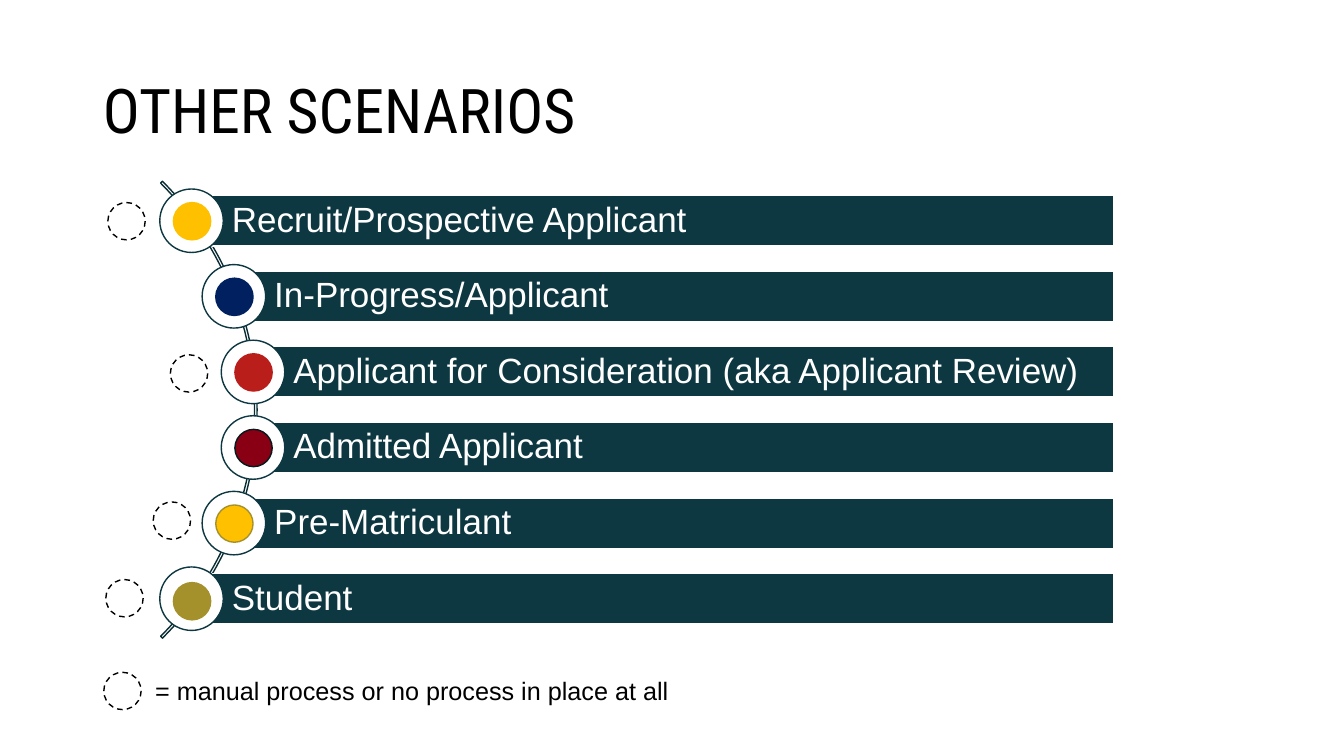
from dataclasses import dataclass
from typing import Optional

from pptx import Presentation
from pptx.dml.color import RGBColor
from pptx.enum.dml import MSO_LINE
from pptx.enum.shapes import MSO_SHAPE
from pptx.enum.text import MSO_ANCHOR, MSO_AUTO_SIZE, PP_ALIGN
from pptx.util import Inches, Pt

COLORS = {
    "black": "000000",
    "white": "FFFFFF",
    "teal": "0D3841",
    "dark_teal": "0A2D34",
    "ink": "06191C",
    "gold": "FFC000",
    "navy": "002060",
    "red": "B91E1B",
    "maroon": "890015",
    "olive": "A4912C",
}

BAR_TOP, BAR_PITCH, BAR_HEIGHT, BAR_RIGHT = 1.94, 0.75, 0.5, 11.05
RING_SIZE, DOT_SIZE = 0.63, 0.37


@dataclass
class Scenario:
    label: str
    left: float
    fill: str
    line: str
    manual: Optional[tuple[float, float]] = None
    dot_shift: float = 0


SCENARIOS = [
    Scenario("Recruit/Prospective Applicant", 1.9, "gold", "gold", (1.07, 2.01)),
    Scenario("In-Progress/Applicant", 2.32, "navy", "navy"),
    Scenario("Applicant for Consideration (aka Applicant Review)", 2.51, "red", "red", (1.69, 3.52)),
    Scenario("Admitted Applicant", 2.51, "maroon", "ink"),
    Scenario("Pre-Matriculant", 2.32, "gold", "olive", (1.52, 4.98)),
    Scenario("Student", 1.9, "olive", "olive", (1.05, 5.75), 0.02),
]


def rgb(name: str) -> RGBColor:
    return RGBColor.from_string(COLORS[name])


def add_shape(s, kind, left: float, top: float, width: float, height: float,
              *, line: str, fill: Optional[str] = None, dashed: bool = False):
    sp = s.shapes.add_shape(kind, Inches(left), Inches(top), Inches(width), Inches(height))
    sp.shadow.inherit = False
    if fill:
        sp.fill.solid()
        sp.fill.fore_color.rgb = rgb(fill)
    else:
        sp.fill.background()
    sp.line.color.rgb = rgb(line)
    sp.line.width = Pt(1)
    if dashed:
        sp.line.dash_style = MSO_LINE.DASH
    return sp


def add_circle(s, left: float, top: float, size: float, **style) -> None:
    add_shape(s, MSO_SHAPE.OVAL, left, top, size, size, **style)


def set_text(tf, text: str, *, size: float, color: str, font: str = "Arial",
             spacing: Optional[float] = None, anchor=MSO_ANCHOR.TOP) -> None:
    tf.vertical_anchor = anchor
    p = tf.paragraphs[0]
    p.alignment = PP_ALIGN.LEFT
    if spacing:
        p.line_spacing = spacing
    r = p.add_run()
    r.text = text
    r.font.name = font
    r.font.size = Pt(size)
    r.font.color.rgb = rgb(color)


def add_title(s, text: str) -> None:
    sp = s.shapes.title
    sp.left, sp.top, sp.width, sp.height = (Inches(v) for v in (0.92, 0.4, 11.5, 1.45))
    set_text(sp.text_frame, text, size=44, color="black", font="Roboto Condensed",
             spacing=0.9, anchor=MSO_ANCHOR.MIDDLE)


def add_arc(s) -> None:
    sp = add_shape(s, MSO_SHAPE.BLOCK_ARC, -3.86, 0.86, 6.41, 6.41, line="dark_teal")
    for i, value in enumerate((189, 27, 0.004)):
        sp.adjustments[i] = value


def add_scenario(s, row: Scenario, top: float) -> None:
    bar = add_shape(s, MSO_SHAPE.RECTANGLE, row.left, top, BAR_RIGHT - row.left, BAR_HEIGHT,
                    fill="teal", line="white")
    tf = bar.text_frame
    tf.word_wrap = True
    tf.margin_left = Inches(0.4)
    tf.margin_top = tf.margin_right = tf.margin_bottom = Inches(0.07)
    set_text(tf, row.label, size=25, color="white", spacing=0.9, anchor=MSO_ANCHOR.MIDDLE)
    add_circle(s, row.left - RING_SIZE / 2, top + (BAR_HEIGHT - RING_SIZE) / 2, RING_SIZE,
               fill="white", line="teal")
    add_circle(s, row.left - 0.18, top + 0.07 + row.dot_shift, DOT_SIZE,
               fill=row.fill, line=row.line)
    if row.manual:
        add_circle(s, *row.manual, DOT_SIZE, line="black", dashed=True)


def add_legend(s, text: str) -> None:
    add_circle(s, 1.03, 6.67, DOT_SIZE, line="black", dashed=True)
    sp = s.shapes.add_textbox(Inches(1.44), Inches(6.65), Inches(5.34), Inches(0.4))
    tf = sp.text_frame
    tf.word_wrap = False
    tf.auto_size = MSO_AUTO_SIZE.SHAPE_TO_FIT_TEXT
    set_text(tf, text, size=18, color="black")


def main() -> None:
    prs = Presentation()
    prs.slide_width, prs.slide_height = Inches(13.33), Inches(7.5)
    s = prs.slides.add_slide(prs.slide_layouts[5])
    add_title(s, "OTHER SCENARIOS")
    add_arc(s)
    for i, row in enumerate(SCENARIOS):
        add_scenario(s, row, BAR_TOP + i * BAR_PITCH)
    add_legend(s, "= manual process or no process in place at all")
    prs.save("out.pptx")


if __name__ == "__main__":
    main()
